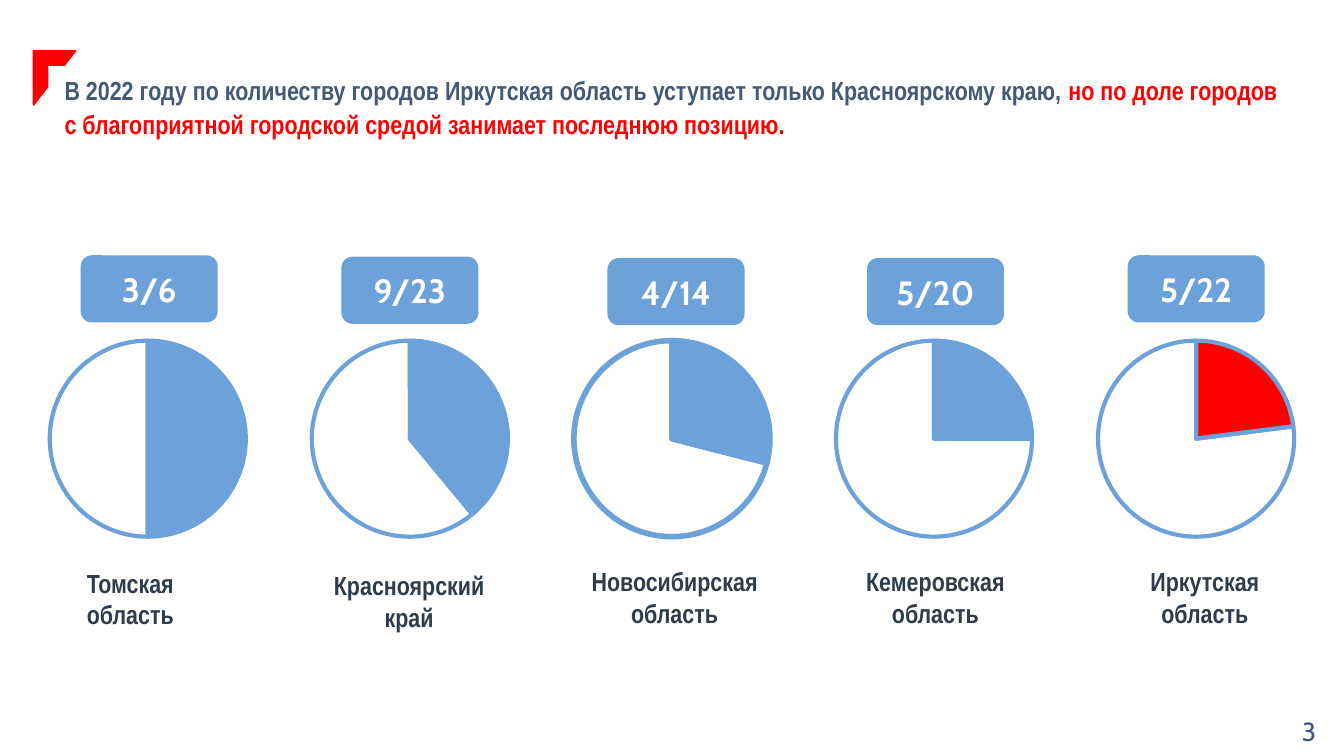
from dataclasses import dataclass

from lxml import etree
from pptx import Presentation
from pptx.chart.data import CategoryChartData
from pptx.dml.color import RGBColor
from pptx.enum.chart import XL_CHART_TYPE
from pptx.enum.shapes import MSO_SHAPE
from pptx.enum.text import MSO_ANCHOR, MSO_AUTO_SIZE, PP_ALIGN
from pptx.util import Inches, Pt

COLORS = {"blue": "6DA1DA", "red": "FF0000", "slate": "435976",
          "dark": "2E3C4D", "white": "FFFFFF", "black": "000000"}
FIRST_CENTER, STEP = 1.1, 1.95
PIE_TOP, PIE_W, PIE_H, PIE_D = 2.4, 2.33, 1.73, 1.46
BADGE_W, BADGE_H = 1.02, 0.5


@dataclass
class Region:
    name: str
    ratio: str
    share: int
    badge_at: tuple[float, float]  # left, top
    label_box: tuple[float, float, float]  # left, top, width
    color: str = "blue"
    line: float = 2.25


REGIONS = [
    Region("Томская область", "3/6", 50, (0.6, 1.9), (0.3, 4.14, 1.34)),
    Region("Красноярский край", "9/23", 39, (2.54, 1.91), (2.33, 4.16, 1.43)),
    Region("Новосибирская область", "4/14", 29, (4.52, 1.92), (4.1, 4.13, 1.84), line=3),
    Region("Кемеровская область", "5/20", 25, (6.45, 1.92), (6.04, 4.13, 1.84)),
    Region("Иркутская область", "5/22", 23, (8.39, 1.9), (8.19, 4.13, 1.55), color="red"),
]


def rgb(name: str) -> RGBColor:
    return RGBColor.from_string(COLORS[name])


def write(tf, text: str, *, font: str = "Arial Narrow", size: float = 14,
          color: str = "dark", bold: bool = True, align=PP_ALIGN.CENTER,
          anchor=MSO_ANCHOR.MIDDLE, inset: tuple[float, float] = (0.1, 0.05)) -> None:
    """Append a formatted run to the first paragraph of a text frame."""
    tf.word_wrap = True
    tf.auto_size = MSO_AUTO_SIZE.NONE
    tf.vertical_anchor = anchor
    tf.margin_left = tf.margin_right = Inches(inset[0])
    tf.margin_top = tf.margin_bottom = Inches(inset[1])
    p = tf.paragraphs[0]
    p.alignment = align
    r = p.add_run()
    r.text = text
    r.font.name, r.font.size, r.font.bold = font, Pt(size), bold
    r.font.color.rgb = rgb(color)


def add_box(s, kind, x: float, y: float, w: float, h: float, color: str):
    sp = s.shapes.add_shape(kind, Inches(x), Inches(y), Inches(w), Inches(h))
    sp.shadow.inherit = False
    sp.fill.solid()
    sp.fill.fore_color.rgb = rgb(color)
    sp.line.fill.background()
    return sp


def set_plot_layout(chart, w: float, h: float) -> None:
    """Centre the plot, taking the given fractions of the chart frame."""
    ns = "http://schemas.openxmlformats.org/drawingml/2006/chart"
    area = chart.element.find(f".//{{{ns}}}plotArea")
    for old in area.findall(f"{{{ns}}}layout"):
        area.remove(old)
    layout = etree.Element(f"{{{ns}}}layout")
    manual = etree.SubElement(layout, f"{{{ns}}}manualLayout")
    for tag, val in (("layoutTarget", "inner"), ("xMode", "edge"), ("yMode", "edge"),
                     ("x", (1 - w) / 2), ("y", (1 - h) / 2), ("w", w), ("h", h)):
        etree.SubElement(manual, f"{{{ns}}}{tag}").set("val", str(val))
    area.insert(0, layout)


def add_pie(s, region: Region, center: float) -> None:
    data = CategoryChartData()
    data.categories = ["1", "2"]
    data.add_series("Series 1", (region.share, 100 - region.share))
    chart = s.shapes.add_chart(
        XL_CHART_TYPE.PIE, Inches(center - PIE_W / 2), Inches(PIE_TOP),
        Inches(PIE_W), Inches(PIE_H), data).chart
    chart.has_legend = chart.has_title = False
    chart.font.name, chart.font.size = "Calibri", Pt(10)
    chart.font.color.rgb = rgb("black")
    plot = chart.plots[0]
    plot.vary_by_categories = False
    series = plot.series[0]
    for part in (series, series.points[0], series.points[1]):
        part.format.line.color.rgb = rgb("blue")
        part.format.line.width = Pt(region.line)
    filled = series.points[0].format.fill
    filled.solid()
    filled.fore_color.rgb = rgb(region.color)
    series.points[1].format.fill.background()
    set_plot_layout(chart, PIE_D / PIE_W, PIE_D / PIE_H)


def add_region(s, region: Region, center: float) -> None:
    add_pie(s, region, center)
    badge = add_box(s, MSO_SHAPE.ROUNDED_RECTANGLE, *region.badge_at,
                    BADGE_W, BADGE_H, "blue")
    write(badge.text_frame, region.ratio, font="Cabin", size=18, color="white")
    x, y, w = region.label_box
    label = s.shapes.add_textbox(Inches(x), Inches(y), Inches(w), Inches(0.63))
    write(label.text_frame, region.name, anchor=MSO_ANCHOR.TOP, inset=(0.13, 0.08))


def main() -> None:
    prs = Presentation()
    prs.slide_width = Inches(10)
    prs.slide_height = prs.slide_width * 9 // 16
    s = prs.slides.add_slide(prs.slide_layouts[5])

    # Title
    title = s.shapes.title
    title.left, title.top = Inches(0.32), Inches(0.22)
    title.width, title.height = Inches(9.38), Inches(1.14)
    for text, color in (
            ("В 2022 году по количеству городов Иркутская область уступает "
             "только Красноярскому краю, ", "slate"),
            ("но по доле городов с благоприятной городской средой занимает "
             "последнюю позицию.", "red")):
        write(title.text_frame, text, color=color, align=PP_ALIGN.LEFT,
              inset=(0.16, 0.1))
    title.text_frame.paragraphs[0].line_spacing = 1.07

    # Regions: pie, ratio badge and name
    for i, region in enumerate(REGIONS):
        add_region(s, region, FIRST_CENTER + i * STEP)

    # Slide number
    number = s.shapes.add_textbox(Inches(9.58), Inches(5.3), Inches(0.32), Inches(0.28))
    write(number.text_frame, "3", font="Cabin", color="slate", bold=False,
          inset=(0.07, 0.04))

    # Corner mark
    corner = add_box(s, MSO_SHAPE.HALF_FRAME, 0.25, 0.38, 0.31, 0.4, "red")
    corner.line.color.rgb = rgb("red")
    corner.line.width = Pt(1)

    prs.save("out.pptx")


if __name__ == "__main__":
    main()
